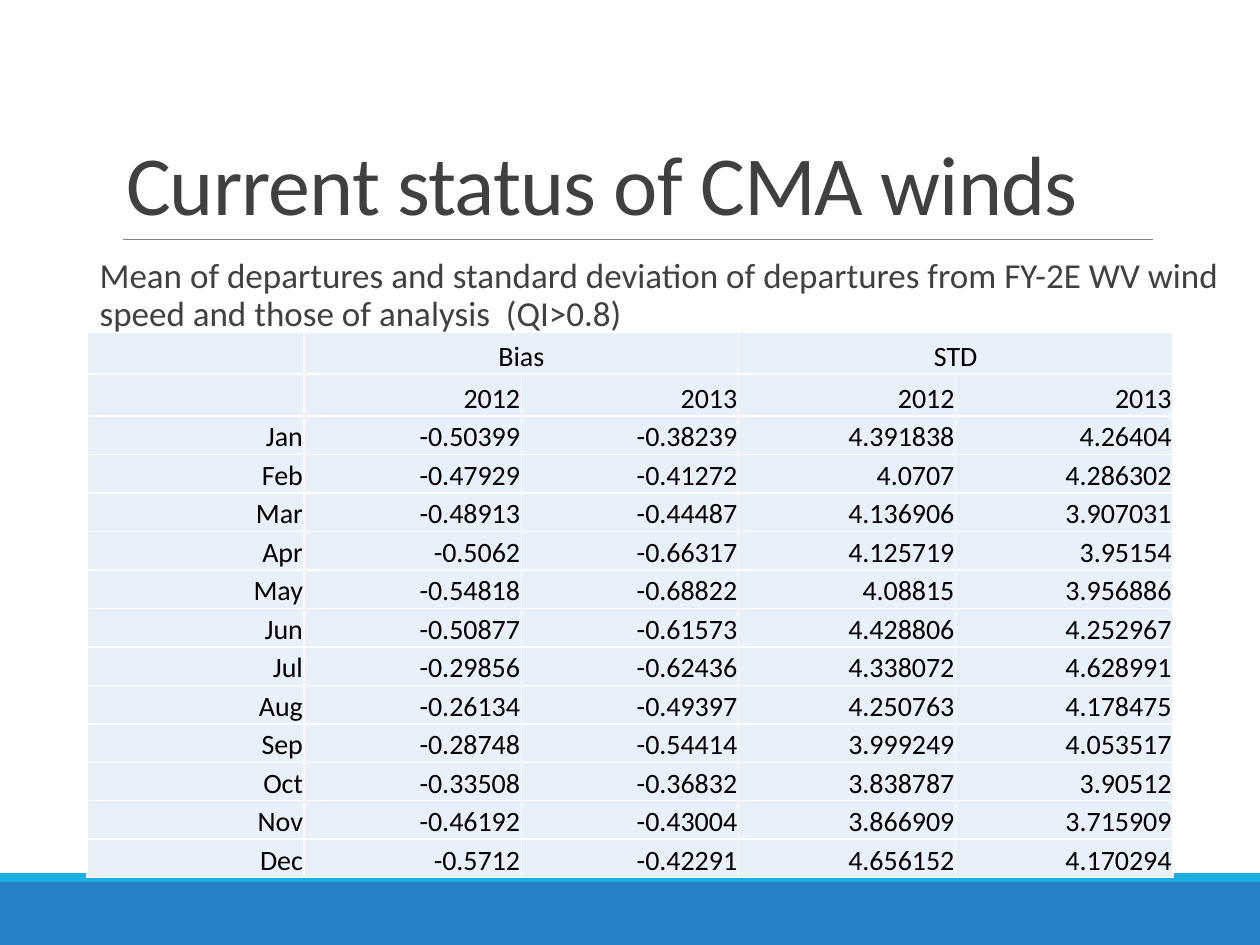
from lxml import etree
from pptx import Presentation
from pptx.dml.color import RGBColor
from pptx.enum import shapes, text
from pptx.oxml import ns
from pptx.util import Inches, Pt

COLORS = {"blue": "2683C6", "cyan": "1CADE4", "rule": "808080", "text": "404040",
          "cell": "E8F1FA", "border": "FFFFFF", "black": "000000"}
HEADERS = [["", "Bias", "", "STD", ""], ["", "2012", "2013", "2012", "2013"]]
MONTHS = """Jan -0.50399 -0.38239 4.391838 4.26404
Feb -0.47929 -0.41272 4.0707 4.286302
Mar -0.48913 -0.44487 4.136906 3.907031
Apr -0.5062 -0.66317 4.125719 3.95154
May -0.54818 -0.68822 4.08815 3.956886
Jun -0.50877 -0.61573 4.428806 4.252967
Jul -0.29856 -0.62436 4.338072 4.628991
Aug -0.26134 -0.49397 4.250763 4.178475
Sep -0.28748 -0.54414 3.999249 4.053517
Oct -0.33508 -0.36832 3.838787 3.90512
Nov -0.46192 -0.43004 3.866909 3.715909
Dec -0.5712 -0.42291 4.656152 4.170294"""


def format_runs(paragraph, size, color):
    for run in paragraph.runs:
        run.font.name = "Calibri"
        run.font.size = Pt(size)
        run.font.color.rgb = RGBColor.from_string(COLORS[color])


def place(part, left, top, width, height):
    part.left, part.top = Inches(left), Inches(top)
    part.width, part.height = Inches(width), Inches(height)


prs = Presentation()
prs.slide_width, prs.slide_height = Inches(10), Inches(7.5)
slide = prs.slides.add_slide(prs.slide_layouts[1])

# Footer bands
for color, top, height in [("blue", 7, 0.5), ("cyan", 6.93, 0.07)]:
    band = slide.shapes.add_shape(shapes.MSO_SHAPE.RECTANGLE, 0, Inches(top),
                                  prs.slide_width, Inches(height))
    band.shadow.inherit = False
    band.fill.solid()
    band.fill.fore_color.rgb = RGBColor.from_string(COLORS[color])
    band.line.fill.background()

# Rule under the title
rule = slide.shapes.add_connector(shapes.MSO_CONNECTOR.STRAIGHT, Inches(0.98), Inches(1.9),
                                  Inches(9.15), Inches(1.9))
rule.line.color.rgb = RGBColor.from_string(COLORS["rule"])
rule.line.width = Pt(0.5)
etree.SubElement(rule._element.spPr, ns.qn("a:effectLst"))

# Title
title = slide.shapes.title
place(title, 0.9, 0.31, 8.25, 1.59)
title.text_frame.text = "Current status of CMA winds"
title.text_frame.auto_size = text.MSO_AUTO_SIZE.NONE
title.text_frame.vertical_anchor = text.MSO_ANCHOR.BOTTOM
heading = title.text_frame.paragraphs[0]
heading.alignment = text.PP_ALIGN.LEFT
heading.line_spacing = 0.85
format_runs(heading, 48, "text")
heading.runs[0].font._element.set("spc", "-50")

# Description
body = slide.placeholders[1]
place(body, 0.69, 2, 9.03, 4.76)
body.text_frame.text = ("Mean of departures and standard deviation of departures from "
                        "FY-2E WV wind speed and those of analysis  (QI>0.8)")
body.text_frame.auto_size = text.MSO_AUTO_SIZE.NONE
body.text_frame.margin_left = body.text_frame.margin_right = 0
description = body.text_frame.paragraphs[0]
description.line_spacing = 0.9
description.space_before, description.space_after = Pt(12), Pt(2)
format_runs(description, 20, "text")
properties = description._p.get_or_add_pPr()
properties.set("marL", str(Inches(0.1)))
properties.set("indent", str(Inches(-0.1)))
bullet_color = etree.SubElement(properties, ns.qn("a:buClr"))
etree.SubElement(bullet_color, ns.qn("a:srgbClr"), val=COLORS["cyan"])
etree.SubElement(properties, ns.qn("a:buChar"), char=" ")

# Table of monthly statistics
rows = HEADERS + [line.split() for line in MONTHS.splitlines()]
stats = slide.shapes.add_table(len(rows), 5, Inches(0.69), Inches(2.64),
                               Inches(8.62), Inches(4.28)).table
stats.first_row = stats.horz_banding = False
for header in range(len(HEADERS)):
    stats.rows[header].height = Inches(0.33)
for first in (1, 3):
    stats.cell(0, first).merge(stats.cell(0, first + 1))

for r, row in enumerate(rows):
    for c, value in enumerate(row):
        cell = stats.cell(r, c)
        cell.margin_left = cell.margin_right = cell.margin_top = Inches(0.01)
        cell.margin_bottom = 0
        cell.vertical_anchor = text.MSO_ANCHOR.BOTTOM
        if value:
            cell.text_frame.text = value
            entry = cell.text_frame.paragraphs[0]
            entry.alignment = text.PP_ALIGN.CENTER if r == 0 else text.PP_ALIGN.RIGHT
            format_runs(entry, 16, "black")
        for side in ("lnL", "lnR", "lnT", "lnB"):
            border = etree.SubElement(cell._tc.get_or_add_tcPr(), ns.qn(f"a:{side}"),
                                      w=str(Pt(1)))
            border_fill = etree.SubElement(border, ns.qn("a:solidFill"))
            etree.SubElement(border_fill, ns.qn("a:srgbClr"), val=COLORS["border"])
        cell.fill.solid()
        cell.fill.fore_color.rgb = RGBColor.from_string(COLORS["cell"])

prs.save("out.pptx")
